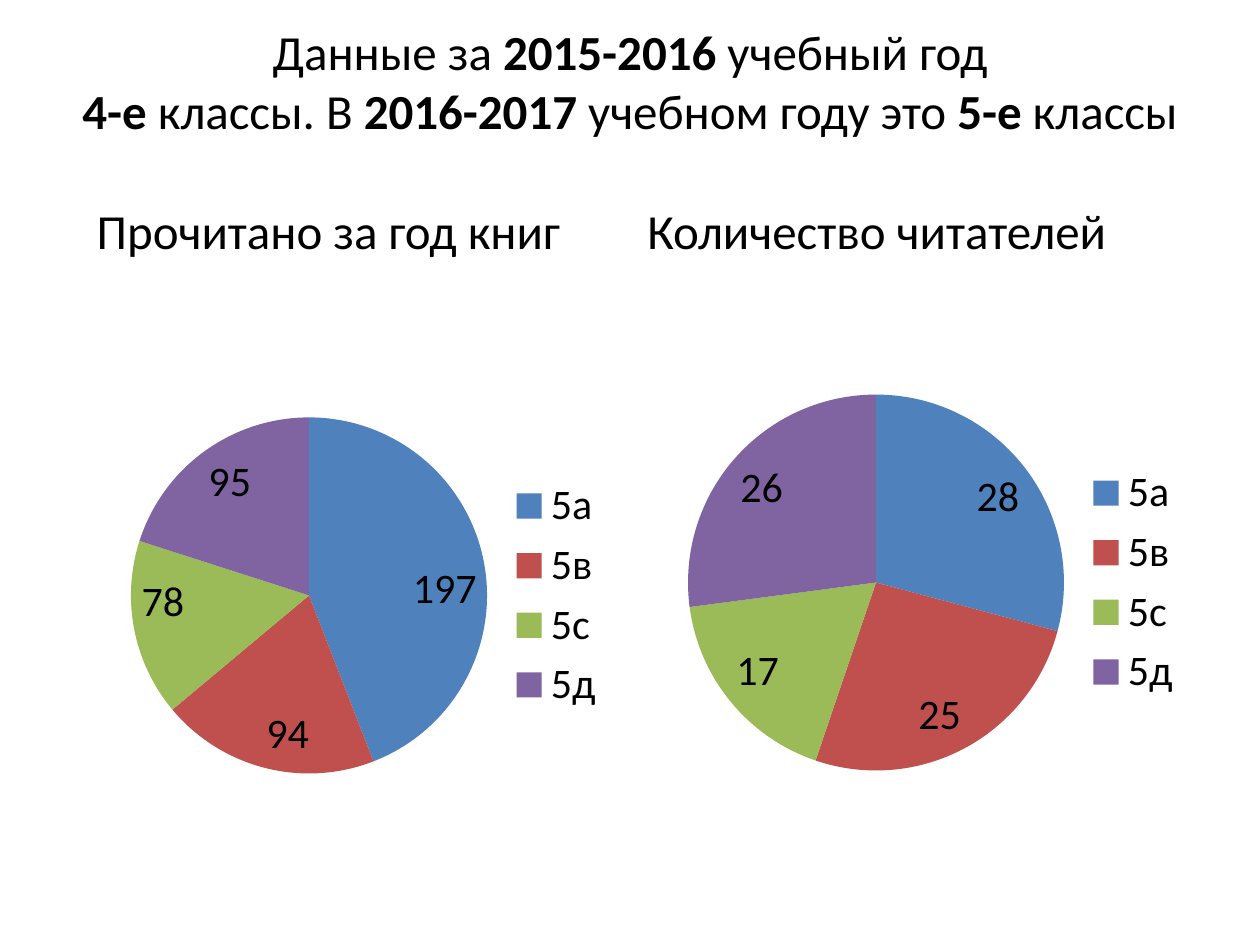
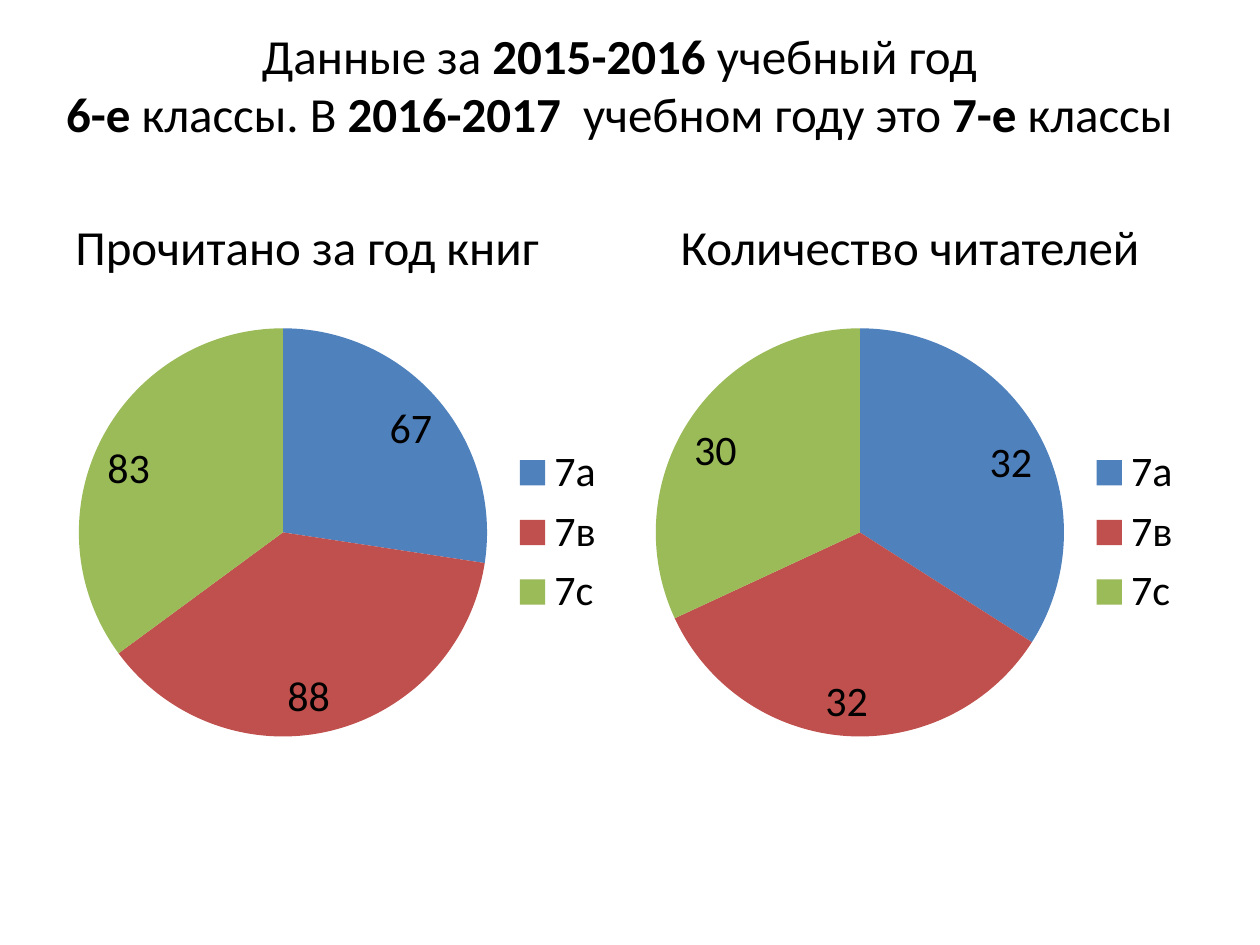
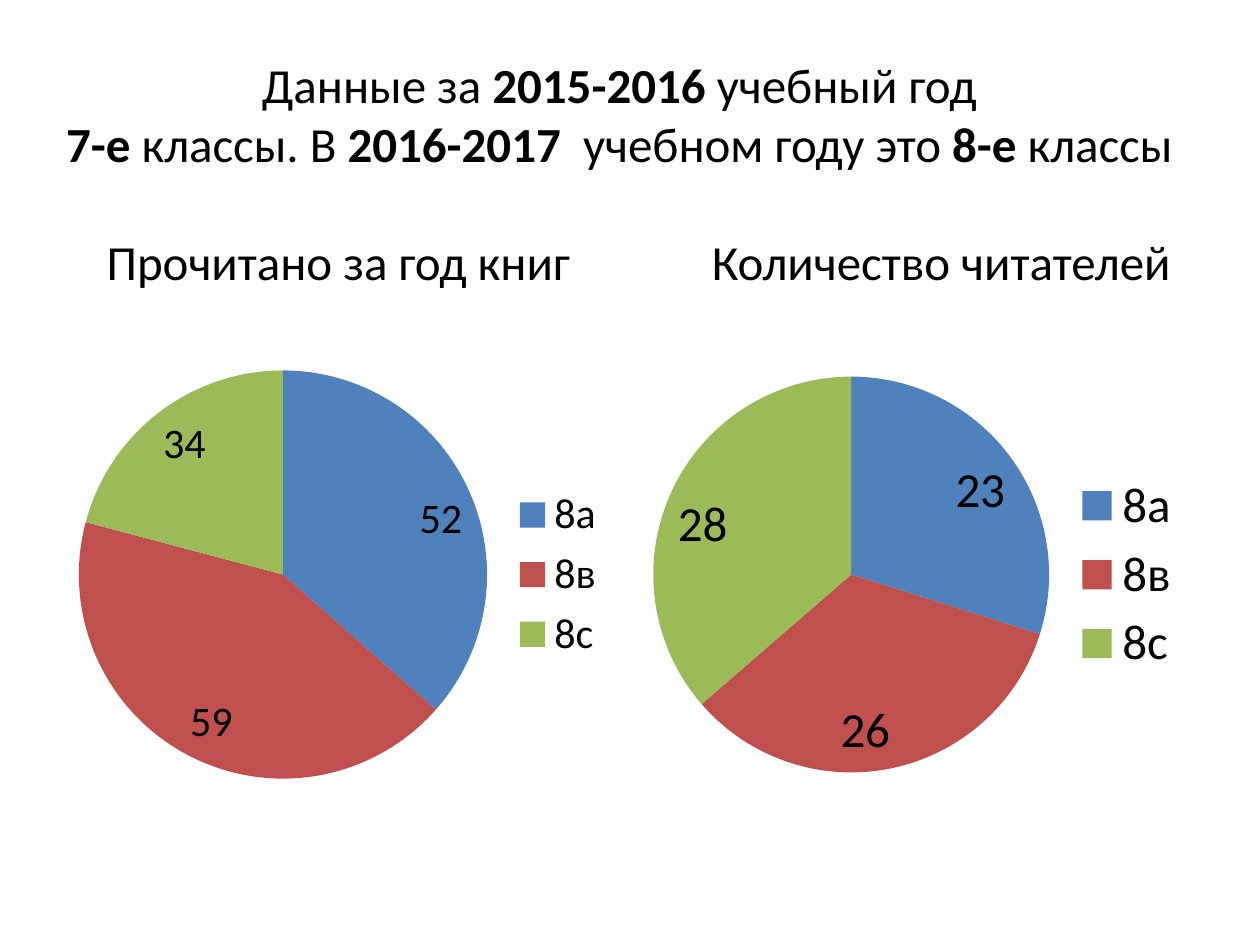
from lxml import etree
from pptx import Presentation
from pptx.chart.data import CategoryChartData
from pptx.dml.color import RGBColor
from pptx.enum.chart import XL_CHART_TYPE, XL_LABEL_POSITION, XL_LEGEND_POSITION
from pptx.enum.text import MSO_ANCHOR, PP_ALIGN
from pptx.oxml.ns import qn
from pptx.util import Cm, Pt

PIE = XL_CHART_TYPE.PIE
INSIDE_END = XL_LABEL_POSITION.INSIDE_END
LEGEND_RIGHT = XL_LEGEND_POSITION.RIGHT
TOP, MIDDLE = MSO_ANCHOR.TOP, MSO_ANCHOR.MIDDLE
LEFT, CENTER = PP_ALIGN.LEFT, PP_ALIGN.CENTER

FONT = "Calibri"
TEXT_SIZE = 28
BLACK = RGBColor(0x00, 0x00, 0x00)
SLICE_COLORS = [
    RGBColor(0x4F, 0x81, 0xBD),
    RGBColor(0xC0, 0x50, 0x4D),
    RGBColor(0x9B, 0xBB, 0x59),
    RGBColor(0x80, 0x64, 0xA2),
]
CAPTIONS = "Прочитано за год книг\tКоличество читателей"
CAPTION_HEIGHT = 1.45
CONTENT_RIGHT = 24.13

SLIDES = [
    {
        "title": "Данные за *2015-2016* учебный год\n"
                 "*4-е* классы. В *2016-2017* учебном году это *5-е* классы",
        "title_at": (1.27, 1.27, 22.86, 1.91),
        "title_bottom": 1.32,
        "caption_at": (1.7, 3.91),
        "caption_tab": 11.1,
        "classes": ["5а", "5в", "5с", "5д"],
        "pies": [
            {"at": (1.27, 5.72, 11.23, 12.57), "values": [187, 84, 68, 85],
             "labels": [197, 94, 78, 95], "diameter": 7.18},
            {"at": (12.9, 5.46, 11.23, 12.57), "values": [28, 25, 17, 26],
             "diameter": 7.58},
        ],
    },
    {
        "title": "Данные за *2015-2016* учебный год\n"
                 "*6-е* классы. В *2016-2017*  учебном году это *7-е* классы",
        "title_at": (0.84, 0.64, 23.29, 3.3),
        "title_bottom": 1.32,
        "caption_at": (1.27, 4.24),
        "caption_tab": 12.2,
        "classes": ["7а", "7в", "7с"],
        "pies": [
            {"at": (1.27, 4.45, 11.23, 12.57), "values": [57, 78, 73],
             "labels": [67, 88, 83]},
            {"at": (12.9, 4.45, 11.23, 12.57), "values": [32, 32, 30]},
        ],
    },
    {
        "title": "Данные за *2015-2016* учебный год\n"
                 "*7-е* классы. В *2016-2017*  учебном году это *8-е* классы",
        "title_at": (0.84, 0.64, 23.29, 3.3),
        "title_bottom": 0.13,
        "caption_at": (1.9, 4.55),
        "caption_tab": 12.2,
        "classes": ["8а", "8в", "8с"],
        "pies": [
            {"at": (1.27, 6.15, 11.23, 10.87), "values": [42, 49, 24],
             "labels": [52, 59, 34]},
            {"at": (12.8, 6.15, 11.33, 10.87), "values": [23, 26, 28],
             "diameter": 7.98, "right": 8.35, "size": 28},
        ],
    },
]


def style_font(font, size, bold=False):
    font.name = FONT
    font.size = Pt(size)
    font.bold = bold
    font.color.rgb = BLACK


def add_text(page, text, at, align=LEFT, anchor=TOP, bottom=0.13, tab=None):
    box = page.shapes.add_textbox(*map(Cm, at))
    frame = box.text_frame
    frame.word_wrap = True
    frame.vertical_anchor = anchor
    frame.margin_bottom = Cm(bottom)
    para = frame.paragraphs[0]
    para.alignment = align
    for row, line in enumerate(text.split("\n")):
        if row:
            para.add_line_break()
        for index, part in enumerate(line.split("*")):
            if part:
                span = para.add_run()
                span.text = part
                style_font(span.font, TEXT_SIZE, bold=index % 2 == 1)
    if tab:
        properties = para._p.get_or_add_pPr()
        stops = etree.SubElement(properties, qn("a:tabLst"))
        etree.SubElement(stops, qn("a:tab"), pos=str(Cm(tab)), algn="l")


def place_pie(chart, width, height, diameter, right):
    area = chart.element.find(".//" + qn("c:plotArea"))
    for old in area.findall(qn("c:layout")):
        area.remove(old)
    layout = etree.Element(qn("c:layout"))
    area.insert(0, layout)
    manual = etree.SubElement(layout, qn("c:manualLayout"))
    settings = {
        "layoutTarget": "inner",
        "xMode": "edge",
        "yMode": "edge",
        "x": round((right - diameter) / width, 4),
        "y": round((height - diameter) / 2 / height, 4),
        "w": round(diameter / width, 4),
        "h": round(diameter / height, 4),
    }
    for name, value in settings.items():
        etree.SubElement(manual, qn("c:" + name), val=str(value))


def add_pie(page, classes, at, values, labels=(), diameter=8.23, right=8.55, size=24):
    data = CategoryChartData()
    data.categories = classes
    data.add_series("Series 1", values)
    chart = page.shapes.add_chart(PIE, *map(Cm, at), data).chart
    style_font(chart.font, size)
    chart.has_title = False
    chart.has_legend = True
    chart.legend.position = LEGEND_RIGHT
    chart.legend.include_in_layout = False
    plot = chart.plots[0]
    plot.vary_by_categories = True
    series = plot.series[0]
    series.data_labels.show_value = True
    series.data_labels.position = INSIDE_END
    for index, color in enumerate(SLICE_COLORS[:len(values)]):
        fill = series.points[index].format.fill
        fill.solid()
        fill.fore_color.rgb = color
    for index, shown in enumerate(labels):
        label = series.points[index].data_label
        span = label.text_frame.paragraphs[0].add_run()
        span.text = str(shown)
        style_font(span.font, size)
        label.position = INSIDE_END
    place_pie(chart, at[2], at[3], diameter, right)


def main():
    deck = Presentation()
    deck.slide_width, deck.slide_height = Cm(25.4), Cm(19.05)
    for content in SLIDES:
        page = deck.slides.add_slide(deck.slide_layouts[6])
        add_text(page, content["title"], content["title_at"], align=CENTER,
                 anchor=MIDDLE, bottom=content["title_bottom"])
        left, top = content["caption_at"]
        add_text(page, CAPTIONS, (left, top, CONTENT_RIGHT - left, CAPTION_HEIGHT),
                 tab=content["caption_tab"])
        for pie in content["pies"]:
            add_pie(page, content["classes"], **pie)
    deck.save("out.pptx")


if __name__ == "__main__":
    main()
